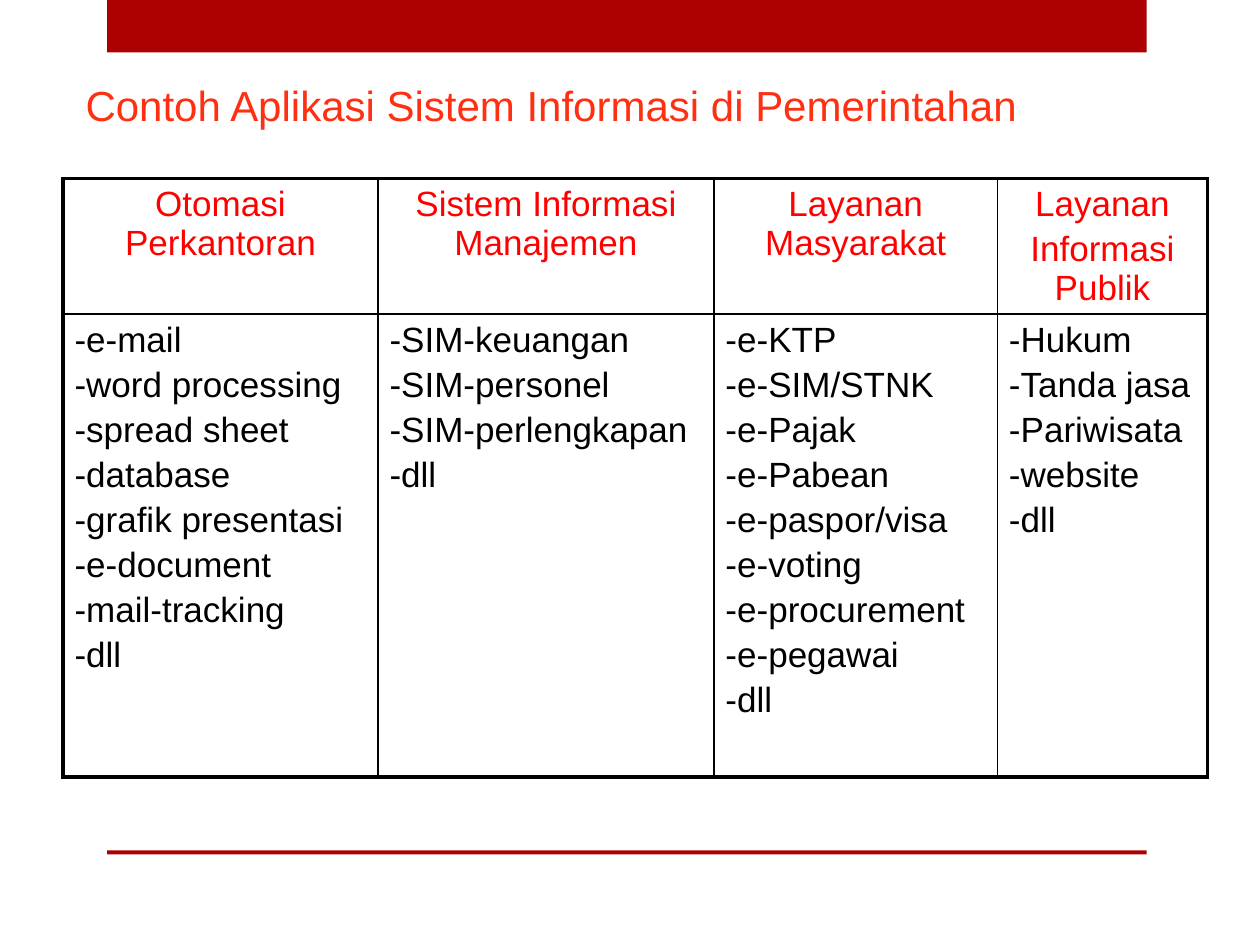
"""Builds a slide with a table of government information system applications."""
from lxml.etree import SubElement
from pptx import Presentation
from pptx.dml.color import RGBColor
from pptx.enum.shapes import MSO_SHAPE
from pptx.enum.text import PP_ALIGN
from pptx.oxml.ns import qn
from pptx.util import Pt

TITLE = "Contoh Aplikasi Sistem Informasi di Pemerintahan"
COLUMNS = [
    (180, ["Otomasi Perkantoran"],
     ["-e-mail", "-word processing", "-spread sheet", "-database",
      "-grafik presentasi", "-e-document", "-mail-tracking", "-dll"]),
    (192, ["Sistem Informasi Manajemen"],
     ["-SIM-keuangan", "-SIM-personel", "-SIM-perlengkapan", "-dll"]),
    (162, ["Layanan Masyarakat"],
     ["-e-KTP", "-e-SIM/STNK", "-e-Pajak", "-e-Pabean", "-e-paspor/visa",
      "-e-voting", "-e-procurement", "-e-pegawai", "-dll"]),
    (120, ["Layanan", "Informasi Publik"],
     ["-Hukum", "-Tanda jasa", "-Pariwisata", "-website", "-dll"]),
]
ROW_HEIGHTS = [77, 264.4]
BARS = [(0, 30), (486, 2.2)]
COLORS = {"bar": "AD0101", "title": "FF2F12", "header": "FF0000",
          "body": "000000", "border": "000000"}
OUTER, INNER = 2.25, 1


def write(frame, lines, size, color, align, before=0):
    frame.text = "\n".join(lines)
    for paragraph in frame.paragraphs:
        paragraph.alignment = align
        paragraph.space_before = Pt(before)
        for span in paragraph.runs:
            span.font.name = "Arial"
            span.font.size = Pt(size)
            span.font.color.rgb = RGBColor.from_string(COLORS[color])


def set_borders(cell, widths):
    properties = cell._tc.get_or_add_tcPr()
    for side, width in widths.items():
        line = SubElement(properties, qn(f"a:ln{side}"), w=str(Pt(width)))
        fill = SubElement(line, qn("a:solidFill"))
        SubElement(fill, qn("a:srgbClr"), val=COLORS["border"])


def add_bar(page, top, height):
    bar = page.shapes.add_shape(MSO_SHAPE.RECTANGLE, Pt(61.2), Pt(top), Pt(594), Pt(height))
    bar.shadow.inherit = False
    bar.fill.solid()
    bar.fill.fore_color.rgb = RGBColor.from_string(COLORS["bar"])
    bar.line.fill.background()


def add_applications(page):
    width = sum(column[0] for column in COLUMNS)
    table = page.shapes.add_table(2, len(COLUMNS), Pt(36), Pt(102), Pt(width),
                                  Pt(sum(ROW_HEIGHTS))).table
    table.first_row = table.horz_banding = False
    for row, height in zip(table.rows, ROW_HEIGHTS):
        row.height = Pt(height)
    last = len(COLUMNS) - 1
    for index, (width, header, items) in enumerate(COLUMNS):
        table.columns[index].width = Pt(width)
        for row, lines in enumerate((header, items)):
            cell = table.cell(row, index)
            cell.margin_left = cell.margin_right = Pt(6.6)
            cell.margin_top = cell.margin_bottom = Pt(3.6)
            set_borders(cell, {"L": OUTER if index == 0 else INNER,
                               "R": OUTER if index == last else INNER,
                               "T": OUTER if row == 0 else INNER,
                               "B": OUTER if row == 1 else INNER})
            cell.fill.background()
            write(cell.text_frame, lines, 20, ("header", "body")[row],
                  (PP_ALIGN.CENTER, PP_ALIGN.LEFT)[row], 3.4)


def main():
    deck = Presentation()
    deck.slide_width, deck.slide_height = Pt(720), Pt(540)
    page = deck.slides.add_slide(deck.slide_layouts[6])
    for top, height in BARS:
        add_bar(page, top, height)
    add_applications(page)
    box = page.shapes.add_textbox(Pt(3), Pt(42), Pt(624), Pt(36))
    box.text_frame.word_wrap = True
    write(box.text_frame, [TITLE], 24, "title", PP_ALIGN.CENTER)
    deck.save("out.pptx")


if __name__ == "__main__":
    main()
